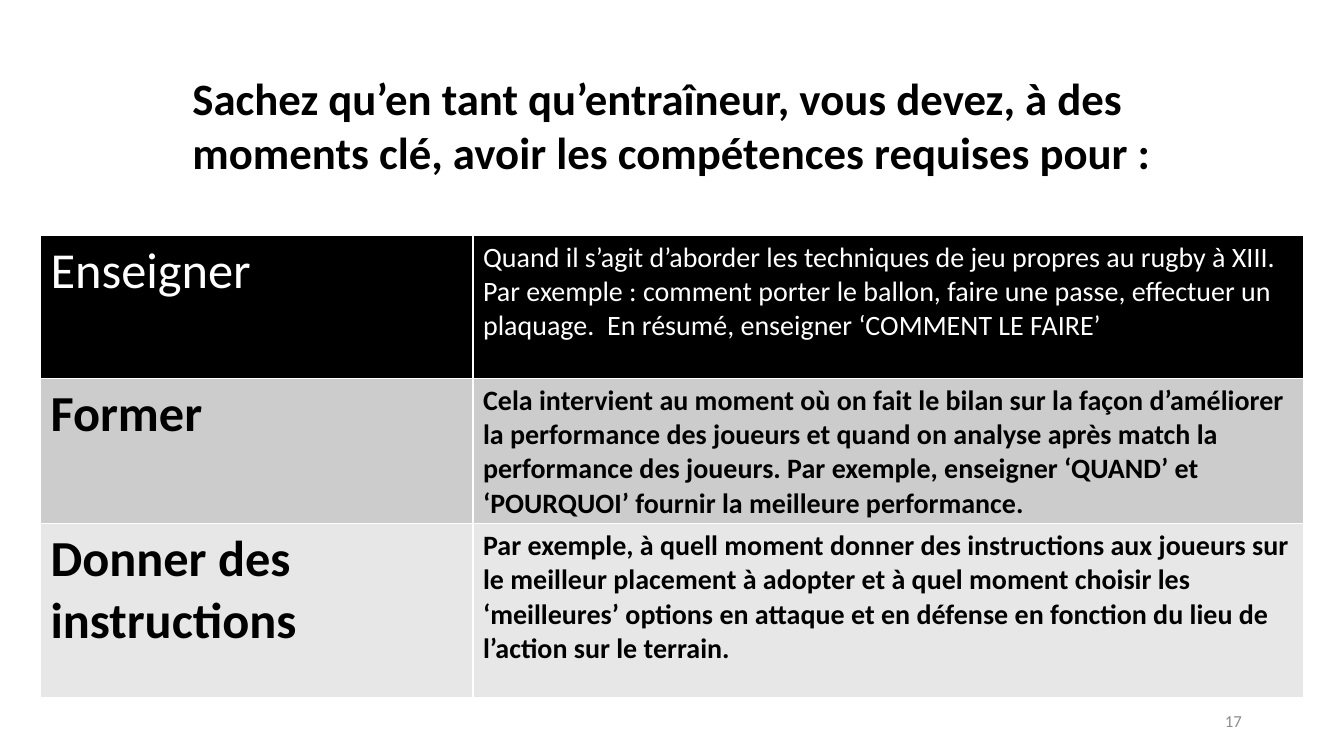
from lxml import etree
from pptx import Presentation
from pptx.dml.color import RGBColor
from pptx.enum import text
from pptx.oxml import ns
from pptx.util import Cm, Pt

FONT = "Calibri"
COLORS = {
    "black": "000000", "white": "FFFFFF", "grey": "8C8C8C",
    "dark_band": "CCCCCC", "light_band": "E7E7E7",
}
HEADING = ("Sachez qu’en tant qu’entraîneur, vous devez, à des moments clé, "
           "avoir les compétences requises pour :")
# Skill, explanation, row height in cm, fill, text colour, bold
SKILLS = [
    ("Enseigner",
     "Quand il s’agit d’aborder les techniques de jeu propres au rugby à XIII. "
     "Par exemple : comment porter le ballon, faire une passe, effectuer un "
     "plaquage.  En résumé, enseigner ‘COMMENT LE FAIRE’",
     3.61, "black", "white", False),
    ("Former",
     "Cela intervient au moment où on fait le bilan sur la façon d’améliorer la "
     "performance des joueurs et quand on analyse après match la performance des "
     "joueurs. Par exemple, enseigner ‘QUAND’ et ‘POURQUOI’ fournir la meilleure "
     "performance.",
     3.66, "dark_band", "black", True),
    ("Donner des\ninstructions",
     "Par exemple, à quell moment donner des instructions aux joueurs sur le "
     "meilleur placement à adopter et à quel moment choisir les ‘meilleures’ "
     "options en attaque et en défense en fonction du lieu de l’action sur le "
     "terrain.",
     4.39, "light_band", "black", True),
]


def rgb(name):
    return RGBColor.from_string(COLORS[name])


def write(frame, wording, size, color, bold=False, align=text.PP_ALIGN.LEFT):
    frame.text = wording
    frame.word_wrap = True
    for paragraph in frame.paragraphs:
        paragraph.alignment = align
        for run in paragraph.runs:
            run.font.name = FONT
            run.font.size = Pt(size)
            run.font.bold = bold
            run.font.color.rgb = rgb(color)


def add_borders(cell, color, width):
    properties = cell._tc.get_or_add_tcPr()
    for position, side in enumerate(("lnL", "lnR", "lnT", "lnB")):
        line = etree.Element(ns.qn(f"a:{side}"), w=str(Pt(width)))
        fill = etree.SubElement(line, ns.qn("a:solidFill"))
        etree.SubElement(fill, ns.qn("a:srgbClr"), val=COLORS[color])
        properties.insert(position, line)


def add_heading(slide, left, top, width, height):
    frame = slide.shapes.add_textbox(left, top, width, height).text_frame
    write(frame, HEADING, 32, "black", bold=True)
    frame.vertical_anchor = text.MSO_ANCHOR.MIDDLE
    frame.margin_left = Cm(0.61)


def add_skills_table(slide, left, top, width, height):
    table = slide.shapes.add_table(len(SKILLS), 2, left, top, width, height).table
    skill_width = Cm(10.9)
    table.columns[0].width = skill_width
    table.columns[1].width = width - skill_width
    for row, skill_row in zip(table.rows, SKILLS):
        skill, explanation, row_height, fill, color, bold = skill_row
        row.height = Cm(row_height)
        for cell, wording, size in zip(row.cells, (skill, explanation), (36, 20)):
            write(cell.text_frame, wording, size, color, bold)
            cell.fill.solid()
            cell.fill.fore_color.rgb = rgb(fill)
            add_borders(cell, "white", 1)


def add_slide_number(slide, left, top, width, height):
    frame = slide.shapes.add_textbox(left, top, width, height).text_frame
    write(frame, "17", 12, "grey", align=text.PP_ALIGN.RIGHT)
    frame.vertical_anchor = text.MSO_ANCHOR.MIDDLE


def main():
    deck = Presentation()
    deck.slide_width, deck.slide_height = Cm(33.87), Cm(19.05)
    slide = deck.slides.add_slide(deck.slide_layouts[6])
    # Heading, table of skills, slide number
    add_heading(slide, Cm(4.24), Cm(1.65), Cm(25.4), Cm(3))
    add_skills_table(slide, Cm(1.02), Cm(5.93), Cm(31.82), Cm(11.66))
    add_slide_number(slide, Cm(23.93), Cm(17.65), Cm(7.62), Cm(1.02))
    deck.save("out.pptx")


if __name__ == "__main__":
    main()
